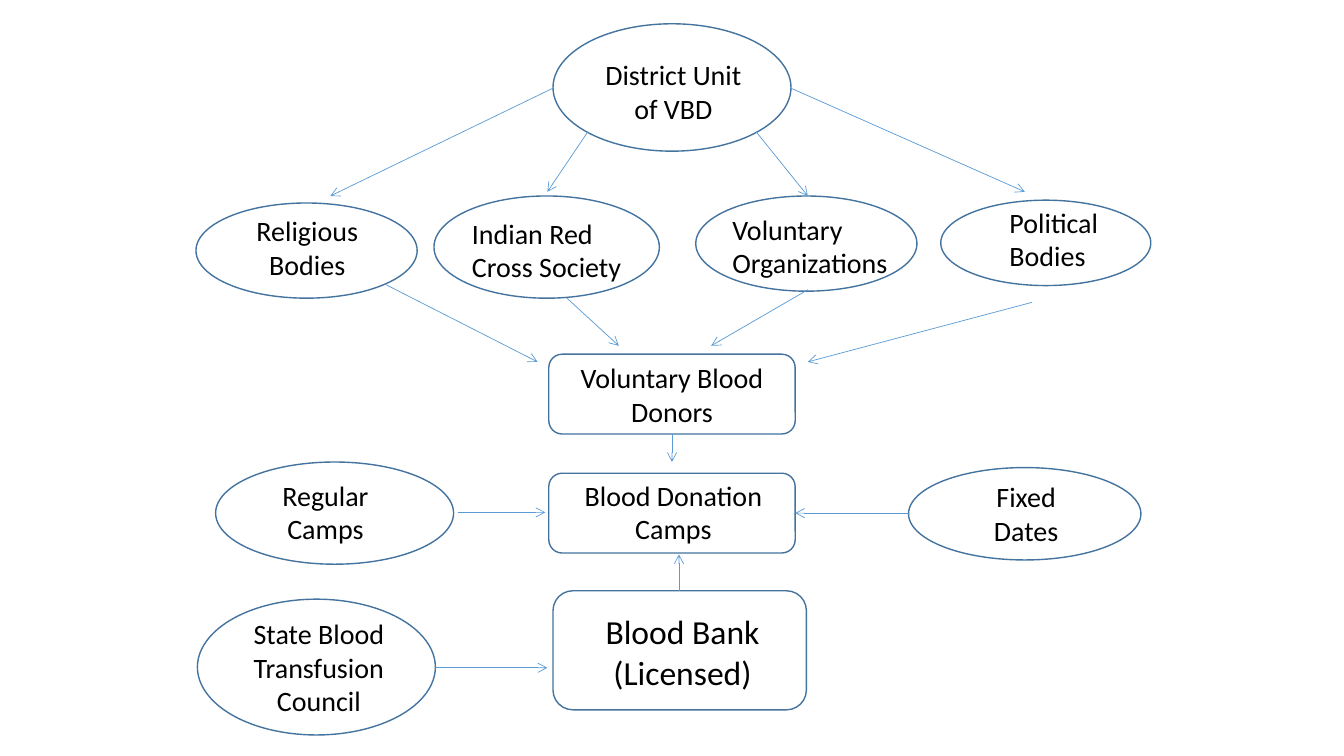
from dataclasses import dataclass

from lxml import etree
from pptx import Presentation
from pptx import util as u
from pptx.dml.color import RGBColor
from pptx.enum import shapes, text
from pptx.oxml import ns

OVAL = shapes.MSO_SHAPE.OVAL
ROUNDED = shapes.MSO_SHAPE.ROUNDED_RECTANGLE
CENTER, LEFT = text.PP_ALIGN.CENTER, text.PP_ALIGN.LEFT


@dataclass(frozen=True)
class Theme:
    font: str = "Calibri"
    ink: str = "000000"
    outline: str = "43739E"
    arrow: str = "5B9BD5"
    body: int = 20
    large: int = 24
    outline_width: float = 1
    arrow_width: float = 0.5


@dataclass(frozen=True)
class Box:
    left: float
    top: float
    width: float
    height: float

    def inner(self, x, y, width, height):
        """Return a box whose corner is offset from this one's corner."""
        return Box(self.left + x, self.top + y, width, height)

    def lengths(self):
        return [u.Pt(v) for v in (self.left, self.top, self.width, self.height)]


THEME = Theme()


def add_text(s, box, words, size=THEME.body, align=CENTER, color=THEME.ink):
    tf = s.shapes.add_textbox(*box.lengths()).text_frame
    tf.word_wrap = True
    tf.auto_size = text.MSO_AUTO_SIZE.SHAPE_TO_FIT_TEXT
    p = tf.paragraphs[0]
    p.alignment = align
    r = p.add_run()
    r.text = words
    r.font.name = THEME.font
    r.font.size = u.Pt(size)
    r.font.color.rgb = RGBColor.from_string(color)


def add_node(s, box, kind, words, label, lines=2, size=THEME.body, align=CENTER):
    """Outline a box; label is the text's x, y and width within it."""
    sp = s.shapes.add_shape(kind, *box.lengths())
    sp.shadow.inherit = False
    sp.fill.background()
    sp.line.color.rgb = RGBColor.from_string(THEME.outline)
    sp.line.width = u.Pt(THEME.outline_width)
    label_height = 7.2 + 1.2 * size * lines
    add_text(s, box.inner(*label, label_height), words, size=size, align=align)


def add_arrows(s, box, *routes):
    """Draw arrows; each route is x1, y1, x2, y2 within the box."""
    for x1, y1, x2, y2 in routes:
        line = s.shapes.add_connector(
            shapes.MSO_CONNECTOR.STRAIGHT,
            u.Pt(box.left + x1), u.Pt(box.top + y1),
            u.Pt(box.left + x2), u.Pt(box.top + y2))
        line.line.color.rgb = RGBColor.from_string(THEME.arrow)
        line.line.width = u.Pt(THEME.arrow_width)
        etree.SubElement(line.line._get_or_add_ln(), ns.qn("a:tailEnd"), type="arrow")
        etree.SubElement(line._element.spPr, ns.qn("a:effectLst"))


def organisers(s, box):
    hub = box.inner((box.width - 170) / 2, 0, 170, 91)
    add_node(s, hub, OVAL, "District Unit of VBD", (25, 20.5, 122))
    bodies = [
        ((0, 128, 158, 68), "Religious Bodies", (26, 4, 107), CENTER),
        ((170, 123, 161, 73), "Indian Red Cross Society", (20, 11, 122), LEFT),
        ((357, 123, 158, 68), "Voluntary Organizations", (19, 8, 130), LEFT),
        ((532, 126, 150, 61), "Political Bodies", (42, 0, 102), LEFT),
    ]
    for place, words, label, align in bodies:
        add_node(s, box.inner(*place), OVAL, words, label, align=align)
    add_arrows(s, box, (255, 46, 96, 123), (280, 77, 251, 120),
               (400, 77, 437, 123), (425, 46, 592, 120))


def donors(s, box):
    add_arrows(s, box, (135, 0, 244, 55.5), (265, 10, 302, 44),
               (437, 4, 368, 44), (597, 13, 437, 55.5))
    goal = box.inner((box.width - 176) / 2, box.height - 57, 176, 57)
    add_node(s, goal, ROUNDED, "Voluntary Blood Donors", (3, 1, 170))


def camps(s, box):
    camp = box.inner((box.width - 176) / 2, 28, 176, 57)
    add_node(s, camp, ROUNDED, "Blood Donation Camps", (4, 0, 170))
    add_node(s, box.inner(14, 20, 170, 73), OVAL, "Regular Camps", (12, 8, 133))
    add_node(s, box.inner(509, 24, 166, 66), OVAL, "Fixed Dates", (33, 5, 102))
    add_arrows(s, box, (340, 0, 340, 20), (187, 56, 249.5, 56),
               (509, 56.5, 428, 56.5))


def blood_bank(s, box):
    add_node(s, box.inner(255, 26, 181, 85), ROUNDED, "Blood Bank (Licensed)",
             (25, 11, 135), size=THEME.large)
    add_node(s, box.inner(1, 32, 170, 97), OVAL,
             "State Blood Transfusion Council", (32, 9, 109.5), lines=3)
    add_arrows(s, box, (171, 81, 251, 81), (345, 26, 345, 0))


def main():
    prs = Presentation()
    prs.slide_width, prs.slide_height = u.Pt(960), u.Pt(540)
    s = prs.slides.add_slide(prs.slide_layouts[6])
    organisers(s, Box(140, 17, 680, 196))
    donors(s, Box(140, 203, 680, 107))
    camps(s, Box(140, 310, 680, 93))
    blood_bank(s, Box(140, 396, 680, 129))
    prs.save("out.pptx")


if __name__ == "__main__":
    main()
